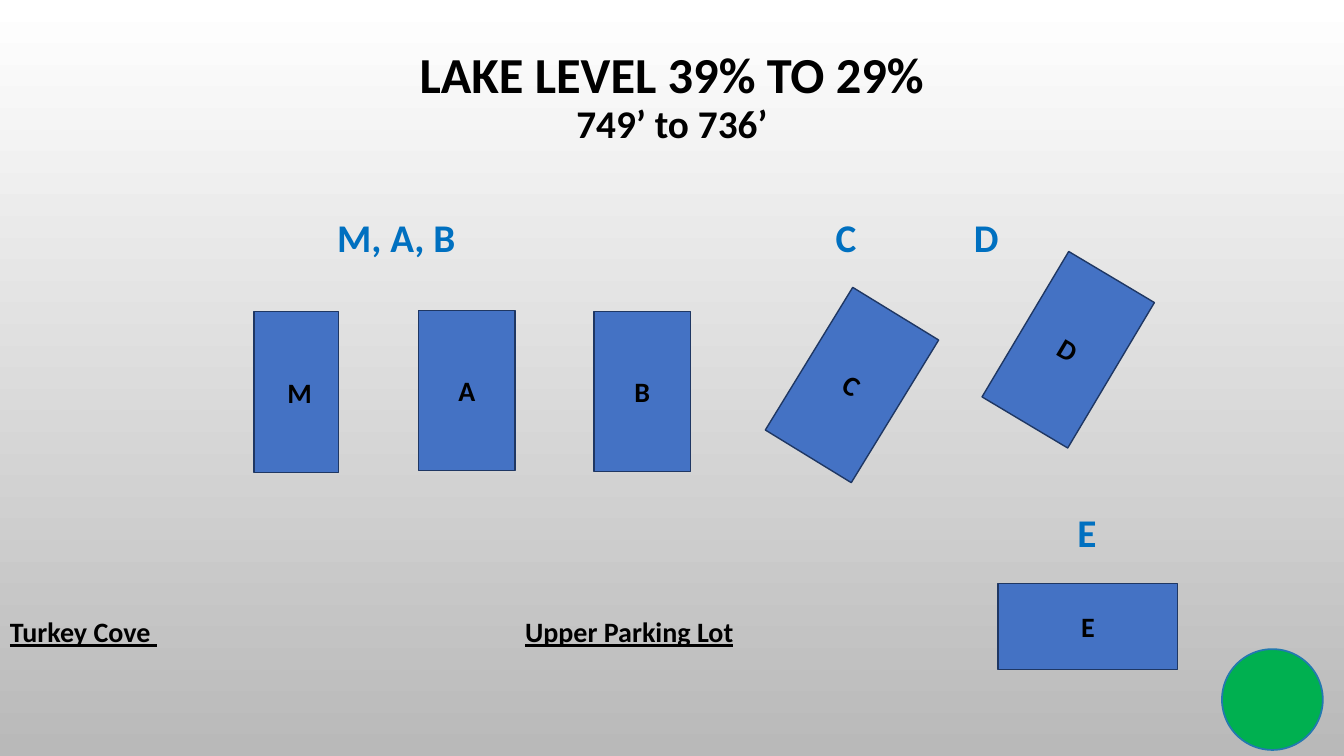
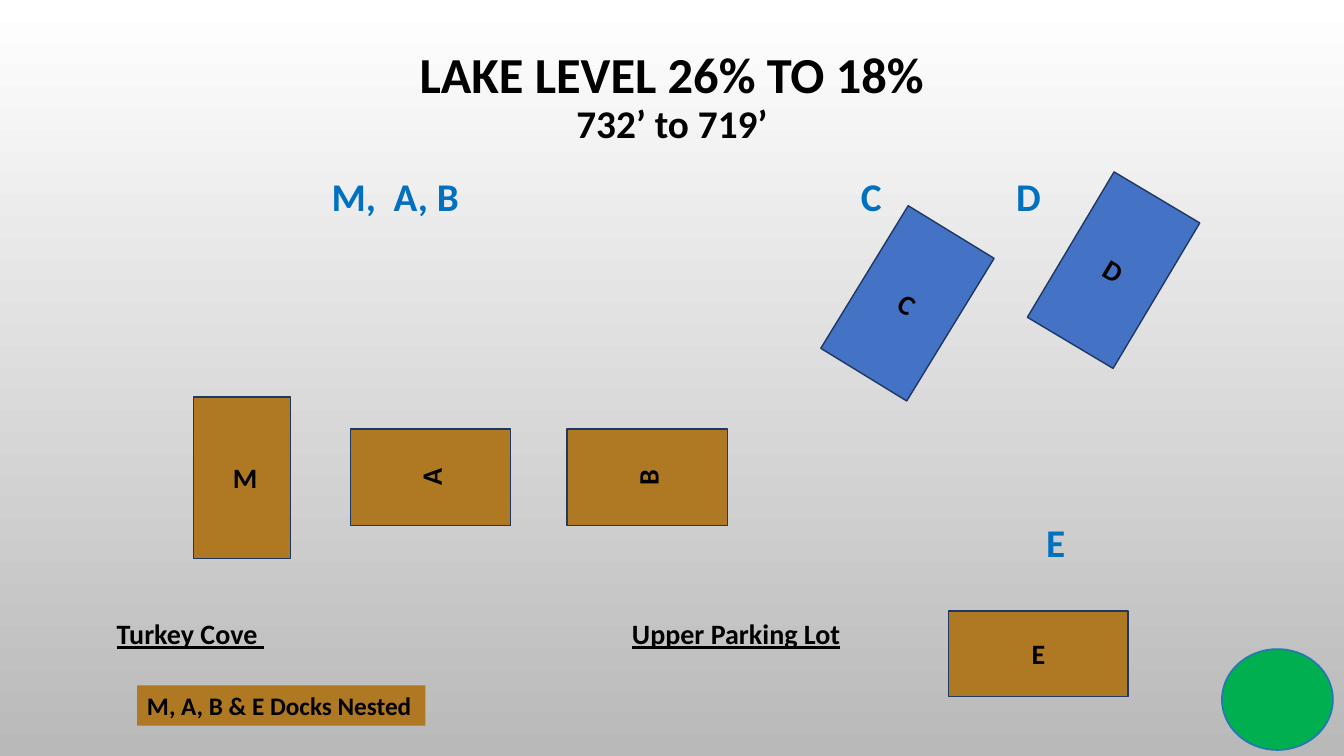
from pptx import Presentation
from pptx.dml.color import RGBColor as RGB
from pptx.enum.shapes import MSO_SHAPE as SHAPE
from pptx.enum.text import MSO_ANCHOR as ANCHOR, PP_ALIGN as ALIGN
from pptx.util import Inches, Pt

BLACK = RGB(0x00, 0x00, 0x00)
WHITE = RGB(0xFF, 0xFF, 0xFF)
GREY = RGB(0xB9, 0xB9, 0xB9)
BLUE = RGB(0x44, 0x72, 0xC4)
BROWN = RGB(0xAF, 0x78, 0x23)
GREEN = RGB(0x00, 0xB0, 0x50)
NAVY = RGB(0x1F, 0x37, 0x63)
RIM = RGB(0x23, 0x79, 0xB0)
LABEL_BLUE = RGB(0x00, 0x70, 0xC0)

# Text formats
TITLE = dict(size=Pt(36), bold=True, color=BLACK)
LEVEL = dict(TITLE, size=Pt(28))
LABEL = dict(LEVEL, color=LABEL_BLUE)
DOCK = dict(TITLE, size=Pt(20))
PLACE = dict(DOCK, underline=True)
NOTE = dict(TITLE, size=Pt(18))

# docks: name, left, top, width, height, rotation, fill
# labels: text, centre, top; places: text, left, top
SLIDES = [
    dict(
        title=("LAKE LEVEL 39% TO 29%", "749’ to 736’"),
        docks=[
            ("A", 4.15, 3.08, 0.96, 1.59, 0, BLUE),
            ("B", 5.89, 3.09, 0.96, 1.59, 0, BLUE),
            (" M", 2.52, 3.09, 0.84, 1.6, 0, BLUE),
            ("C", 7.95, 2.99, 1, 1.66, 31.5, BLUE),
            ("D", 10.1, 2.63, 0.99, 1.68, 30.8, BLUE),
            ("E", 9.9, 5.79, 1.78, 0.85, 0, BLUE),
        ],
        labels=[("M, A, B", 3.93, 2.07), ("C", 8.39, 2.07),
                ("D", 9.76, 2.07), ("E", 10.78, 4.99)],
        places=[("Turkey Cove ", 0, 6.05), ("Upper Parking Lot", 5.11, 6.05)],
        note=None,
        light_width=1,
    ),
    dict(
        title=("LAKE LEVEL 26% TO 18%", "732’ to 719’"),
        docks=[
            ("A", 3.79, 3.94, 0.96, 1.59, 270, BROWN),
            ("B", 5.94, 3.94, 0.96, 1.59, 270, BROWN),
            (" M", 1.92, 3.94, 0.96, 1.6, 0, BROWN),
            ("C", 8.5, 2.18, 1, 1.66, 31.5, BLUE),
            ("D", 10.55, 1.84, 0.99, 1.68, 30.8, BLUE),
            ("E", 9.41, 6.06, 1.78, 0.85, 0, BROWN),
        ],
        labels=[("M,  A, B", 3.92, 1.66), ("C", 8.64, 1.66),
                ("D", 10.18, 1.66), ("E", 10.47, 5.09)],
        places=[("Turkey Cove ", 1.06, 6.07), ("Upper Parking Lot", 6.17, 6.07)],
        note="M, A, B & E Docks Nested",
        light_width=1.1,
    ),
]


def write(sp, lines, align=ALIGN.CENTER, anchor=ANCHOR.MIDDLE, wrap=True):
    """Fill one paragraph with (text, format) lines."""
    tf = sp.text_frame
    tf.word_wrap = wrap
    tf.vertical_anchor = anchor
    p = tf.paragraphs[0]
    p.alignment = align
    for i, (text, fmt) in enumerate(lines):
        if i:
            p.add_line_break()
        r = p.add_run()
        r.text = text
        r.font.name = "Calibri"
        for key, value in fmt.items():
            if key == "color":
                r.font.color.rgb = value
            else:
                setattr(r.font, key, value)
    return p


def add_text(slide, box, lines, **options):
    return write(slide.shapes.add_textbox(*map(Inches, box)), lines, **options)


def add_shape(slide, kind, box, fill, line=None, weight=1):
    sp = slide.shapes.add_shape(kind, *map(Inches, box))
    sp.shadow.inherit = False
    sp.fill.solid()
    sp.fill.fore_color.rgb = fill
    if line is None:
        sp.line.fill.background()
    else:
        sp.line.color.rgb = line
        sp.line.width = Pt(weight)
    return sp


def set_background(master):
    fill = master.background.fill
    fill.gradient()
    fill.gradient_angle = 270
    for stop, position, color in zip(fill.gradient_stops, (0, 1), (WHITE, GREY)):
        stop.position = position
        stop.color.rgb = color


def build_slide(prs, data):
    slide = prs.slides.add_slide(prs.slide_layouts[6])

    # Title
    p = add_text(slide, (1, 0.35, 11.33, 1.25), zip(data["title"], (TITLE, LEVEL)))
    p.line_spacing = 0.9

    # Docks
    for name, left, top, width, height, rotation, fill in data["docks"]:
        sp = add_shape(slide, SHAPE.RECTANGLE, (left, top, width, height), fill, NAVY)
        sp.rotation = rotation
        write(sp, [(name, DOCK)])

    # Dock labels, centred on their position
    for text, centre, top in data["labels"]:
        width = 0.4 if len(text) == 1 else 2
        add_text(slide, (centre - width / 2, top, width, 0.57), [(text, LABEL)],
                 anchor=ANCHOR.TOP, wrap=False)

    # Places on the shore
    for text, left, top in data["places"]:
        add_text(slide, (left, top, 2.4, 0.44), [(text, PLACE)],
                 align=ALIGN.LEFT, anchor=ANCHOR.TOP)

    # Note on nested docks
    if data["note"]:
        sp = add_shape(slide, SHAPE.RECTANGLE, (1.36, 6.8, 2.86, 0.4), BROWN)
        write(sp, [(data["note"], NOTE)], align=ALIGN.LEFT, anchor=ANCHOR.TOP, wrap=False)

    # Status light
    add_shape(slide, SHAPE.OVAL, (12.12, 6.44, data["light_width"], 1), GREEN, RIM, 1.25)


def main():
    prs = Presentation()
    prs.slide_width, prs.slide_height = Inches(13.33), Inches(7.5)
    set_background(prs.slide_master)
    for data in SLIDES:
        build_slide(prs, data)
    prs.save("out.pptx")


if __name__ == "__main__":
    main()
